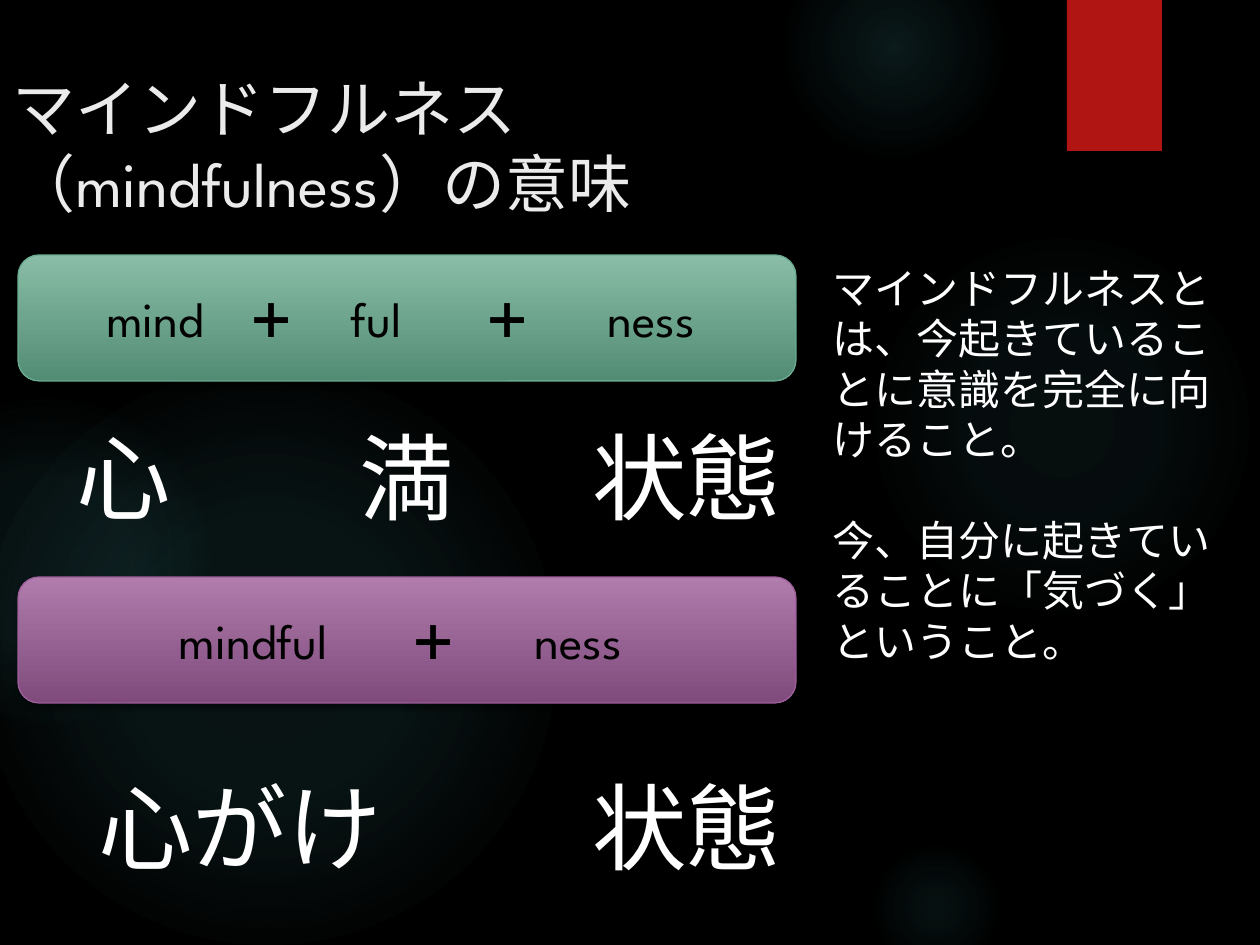
from lxml.etree import SubElement
from pptx import Presentation
from pptx.dml.color import RGBColor
from pptx.enum.shapes import MSO_SHAPE
from pptx.enum.text import MSO_ANCHOR, PP_ALIGN
from pptx.oxml.ns import qn
from pptx.util import Emu, Pt

PX = 914400 / 126
BLACK = RGBColor(0x00, 0x00, 0x00)
WHITE = RGBColor(0xFF, 0xFF, 0xFF)
TITLE_GREY = RGBColor(0xEB, 0xEB, 0xEB)
RED = RGBColor(0xB0, 0x15, 0x13)
GLOW = RGBColor(0x50, 0xB9, 0xC1)
GREEN = (RGBColor(0x89, 0xBD, 0xA7), RGBColor(0x53, 0x8C, 0x74), RGBColor(0x6A, 0xAC, 0x90))
PURPLE = (RGBColor(0xAF, 0x7C, 0xAC), RGBColor(0x7F, 0x4B, 0x7C), RGBColor(0x9E, 0x5E, 0x9B))
LATIN = "League Spartan"
CJK = "Noto Sans CJK JP"


def px(n):
    return Emu(round(n * PX))


class Deck:
    def __init__(self, width, height):
        self.prs = Presentation()
        self.prs.slide_width, self.prs.slide_height = px(width), px(height)
        self.s = self.prs.slides.add_slide(self.prs.slide_layouts[6])
        self.s.background.fill.solid()
        self.s.background.fill.fore_color.rgb = BLACK

    def shape(self, kind, x, y, w, h):
        sp = self.s.shapes.add_shape(kind, px(x), px(y), px(w), px(h))
        sp.shadow.inherit = False
        sp.line.fill.background()
        return sp

    def shadow(self, sp):
        effects = sp._element.spPr.find(qn("a:effectLst"))
        outer = SubElement(effects, qn("a:outerShdw"), blurRad=str(Pt(3)),
                           dist=str(Pt(2)), dir="5400000", rotWithShape="0")
        color = SubElement(outer, qn("a:srgbClr"), val=str(BLACK))
        SubElement(color, qn("a:alpha"), val="45000")

    def glow(self, x, y, size, stops):
        sp = self.shape(MSO_SHAPE.OVAL, x, y, size, size)
        sp.fill.gradient()
        grad = sp._element.spPr.find(qn("a:gradFill"))
        for child in list(grad):
            grad.remove(child)
        gs_list = SubElement(grad, qn("a:gsLst"))
        for position, alpha in stops:
            gs = SubElement(gs_list, qn("a:gs"), pos=str(position * 1000))
            color = SubElement(gs, qn("a:srgbClr"), val=str(GLOW))
            SubElement(color, qn("a:alpha"), val=str(alpha * 1000))
        circle = SubElement(grad, qn("a:path"), path="circle")
        SubElement(circle, qn("a:fillToRect"), l="50000", t="50000", r="50000", b="50000")

    def ribbon(self, x, y, w, h):
        sp = self.shape(MSO_SHAPE.RECTANGLE, x, y, w, h)
        sp.fill.solid()
        sp.fill.fore_color.rgb = RED
        self.shadow(sp)

    def run(self, p, text, size, color, font=LATIN):
        r = p.add_run()
        r.text = text
        r.font.size = Pt(size)
        r.font.name = font
        r.font.color.rgb = color
        SubElement(r._r.get_or_add_rPr(), qn("a:ea"), typeface=CJK)

    def bar(self, x, y, w, h, colors, words):
        top, bottom, edge = colors
        sp = self.shape(MSO_SHAPE.ROUNDED_RECTANGLE, x, y, w, h)
        sp.fill.gradient()
        sp.fill.gradient_angle = 270
        for stop, color, position in zip(sp.fill.gradient_stops, (top, bottom), (0, 1)):
            stop.color.rgb = color
            stop.position = position
        sp.line.color.rgb = edge
        sp.line.width = Pt(0.75)
        self.shadow(sp)
        tf = sp.text_frame
        tf.margin_left = tf.margin_right = 0
        tf.vertical_anchor = MSO_ANCHOR.MIDDLE
        p = tf.paragraphs[0]
        p.alignment = PP_ALIGN.LEFT
        tabs = SubElement(p._p.get_or_add_pPr(), qn("a:tabLst"))
        inset = round(h / 6 * 0.29)
        for word, center in words:
            SubElement(tabs, qn("a:tab"), pos=str(px(center - x - inset)), algn="ctr")
            self.run(p, "\t" + word, 28, BLACK)

    def text(self, x, y, w, h, paragraphs, size, color, font=LATIN, wrap=True, gap=0):
        tf = self.s.shapes.add_textbox(px(x), px(y), px(w), px(h)).text_frame
        tf.word_wrap = wrap
        for i, lines in enumerate(paragraphs):
            p = tf.add_paragraph() if i else tf.paragraphs[0]
            p.space_before = Pt(gap if i else 0)
            for j, line in enumerate(lines):
                if j:
                    p.add_line_break()
                self.run(p, line, size, color, font)

    def kanji(self, x, y, w, word):
        self.text(x, y, w, 127, [[word]], 54, WHITE, CJK, wrap=False)


def main():
    deck = Deck(1260, 945)
    deck.glow(868, 231, 388, [(0, 7), (36, 6), (69, 0)])
    deck.glow(784, -63, 220, [(0, 14), (36, 7), (73, 0)])
    deck.glow(868, 840, 136, [(0, 9), (36, 5), (66, 0)])
    deck.glow(-21, 368, 577, [(0, 11), (36, 10), (75, 0)])
    deck.glow(-116, 399, 325, [(0, 8), (36, 8), (72, 0)])
    deck.ribbon(1067, 0, 95, 151)
    deck.text(0, 63, 1260, 193, [["マインドフルネス", "（mindfulness）の意味"]], 36, TITLE_GREY)

    deck.bar(18, 255, 778, 126, GREEN,
             [("mind", 155), ("➕", 271), ("ful", 376), ("➕", 507), ("ness", 651)])
    for x, w, word in [(64, 121, "心"), (347, 121, "満"), (580, 217, "状態")]:
        deck.kanji(x, 413, w, word)

    deck.bar(18, 577, 778, 126, PURPLE, [("mindful", 253), ("➕", 433), ("ness", 578)])
    for x, w, word in [(86, 311, "心がけ"), (580, 217, "状態")]:
        deck.kanji(x, 763, w, word)

    deck.text(820, 256, 415, 420,
              [["マインドフルネスとは、今起きていることに意識を完全に向けること。"],
               ["今、自分に起きていることに「気づく」ということ。"]], 24, WHITE, gap=29)
    deck.prs.save("out.pptx")


if __name__ == "__main__":
    main()
